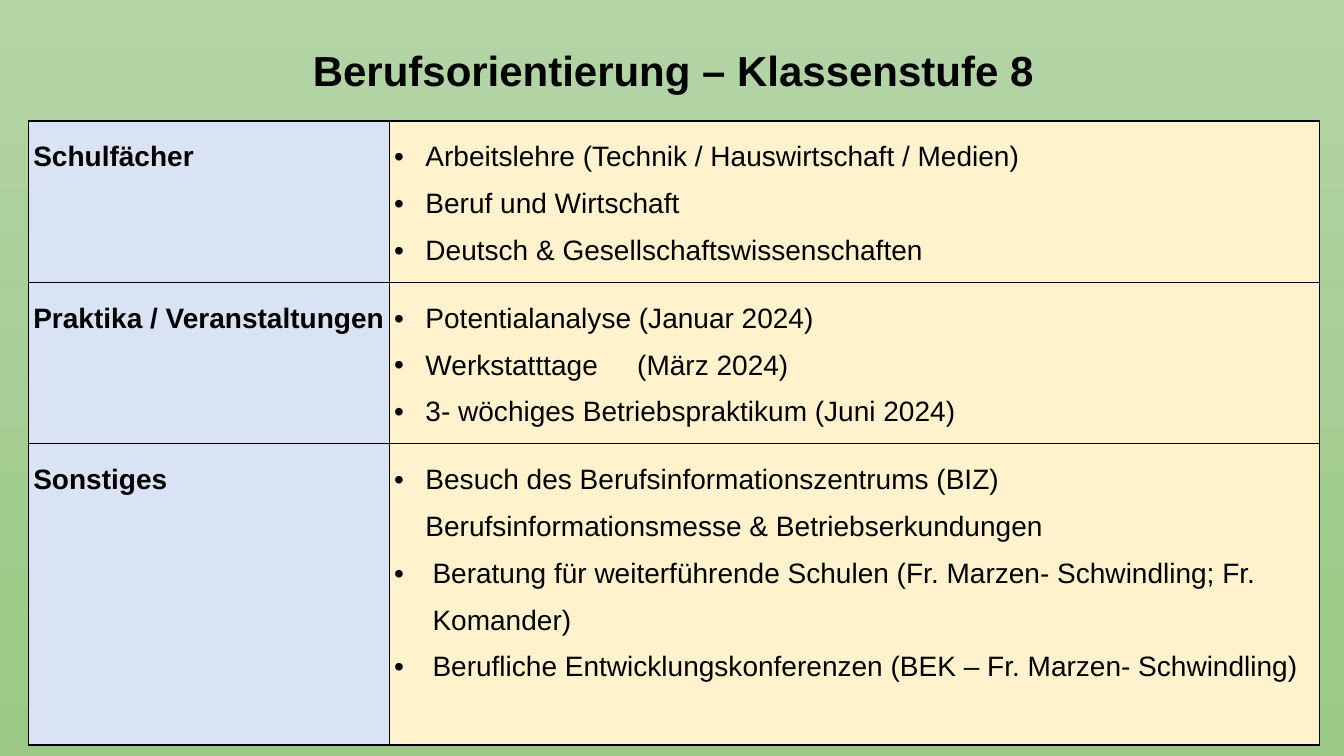
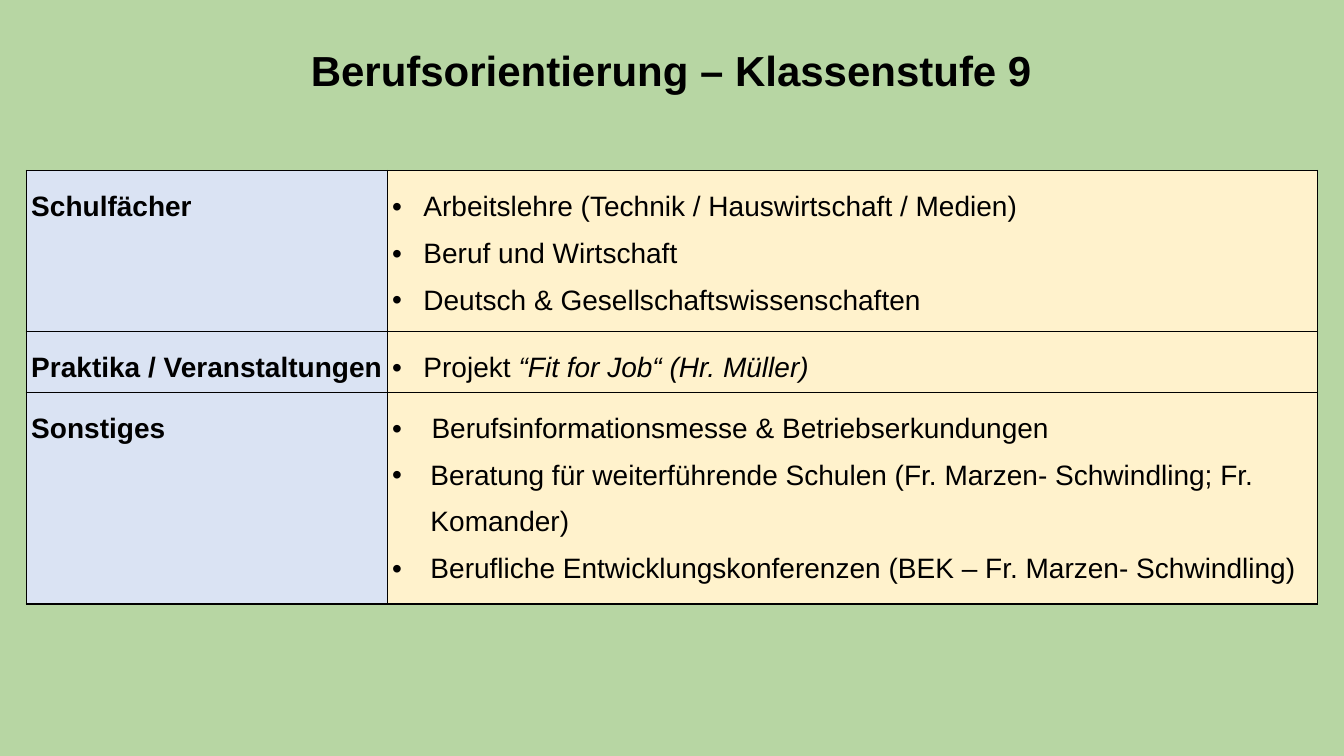
from lxml import etree
from pptx import Presentation
from pptx.dml.color import RGBColor
from pptx.enum import text
from pptx.oxml import ns
from pptx.util import Inches, Pt

BLACK = RGBColor(0, 0, 0)
LABEL_BLUE = RGBColor(0xDA, 0xE3, 0xF3)
CONTENT_CREAM = RGBColor(0xFF, 0xF2, 0xCC)
GREEN_TOP = RGBColor(0xB4, 0xD4, 0xA5)
GREEN_BOTTOM = RGBColor(0x9B, 0xC9, 0x85)
GREEN_PLAIN = RGBColor(0xB7, 0xD6, 0xA3)

FONT = "Arial"
WIDTH, HEIGHT = 13.33, 7.5
COLUMNS = (3.58, 9.23)
PADDING = 0.05
NARROW, WIDE = 0.31, 0.38
DATE_TAB = 2.41
TITLE_SIZE, BODY_SIZE = 30, 20

SUBJECTS = [
    (NARROW, "Arbeitslehre (Technik / Hauswirtschaft / Medien)"),
    (NARROW, "Beruf und Wirtschaft"),
    (NARROW, "Deutsch & Gesellschaftswissenschaften"),
]
ADVICE = [
    (WIDE, "Beratung für weiterführende Schulen (Fr. Marzen- Schwindling; Fr. Komander)"),
    (WIDE, "Berufliche Entwicklungskonferenzen (BEK – Fr. Marzen- Schwindling)"),
]
LABELS = ("Schulfächer", "Praktika / Veranstaltungen", "Sonstiges")
PAGES = [
    {
        "title": "Berufsorientierung – Klassenstufe 8",
        "background": (GREEN_TOP, GREEN_BOTTOM),
        "left": 0.28,
        "top": 1.2,
        "rows": (1.54, 1.54, 2.99),
        "content": (
            SUBJECTS,
            [
                (NARROW, "Potentialanalyse (Januar 2024)"),
                (NARROW, "Werkstatttage\t(März 2024)"),
                (NARROW, "3- wöchiges Betriebspraktikum (Juni 2024)"),
            ],
            [(NARROW, "Besuch des Berufsinformationszentrums (BIZ) "
                      "Berufsinformationsmesse & Betriebserkundungen")] + ADVICE,
        ),
    },
    {
        "title": "Berufsorientierung – Klassenstufe 9",
        "background": (GREEN_PLAIN,),
        "left": 0.26,
        "top": 1.69,
        "rows": (1.49, 0.56, 1.96),
        "content": (
            SUBJECTS,
            [(NARROW, "Projekt ", "“Fit for Job“ (Hr. Müller)")],
            [(WIDE + 0.01, "Berufsinformationsmesse & Betriebserkundungen")] + ADVICE,
        ),
    },
]


def add_element(parent, tag, **attributes):
    return etree.SubElement(parent, ns.qn(tag), attributes)


def style_font(target, size, bold):
    font = target.font
    font.name, font.size, font.bold = FONT, Pt(size), bold
    font.color.rgb = BLACK


def set_padding(target):
    for side in ("left", "right", "top", "bottom"):
        setattr(target, "margin_" + side, Inches(PADDING))


def paint_background(page, colours):
    fill = page.background.fill
    if len(colours) == 1:
        fill.solid()
        fill.fore_color.rgb = colours[0]
        return
    fill.gradient()
    fill.gradient_angle = 270
    for stop, colour in zip(fill.gradient_stops, colours):
        stop.color.rgb = colour


def add_title(page, title, left):
    box = page.shapes.add_textbox(Inches(left), 0, Inches(11.5), Inches(1.45))
    frame = box.text_frame
    frame.word_wrap = True
    frame.vertical_anchor = text.MSO_ANCHOR.MIDDLE
    set_padding(frame)
    para = frame.paragraphs[0]
    para.text = title
    para.alignment = text.PP_ALIGN.CENTER
    para.line_spacing = 0.9
    style_font(para, TITLE_SIZE, True)


def style_cell(cell, colour):
    cell.fill.solid()
    cell.fill.fore_color.rgb = colour
    set_padding(cell)
    properties = cell._tc.get_or_add_tcPr()
    for position, side in enumerate("LRTB"):
        line = etree.Element(ns.qn("a:ln" + side), w=str(Pt(1)))
        solid = add_element(line, "a:solidFill")
        add_element(solid, "a:srgbClr", val=str(BLACK))
        properties.insert(position, line)


def add_bullet(para, indent):
    properties = para._p.get_or_add_pPr()
    properties.set("marL", str(Inches(indent)))
    properties.set("indent", str(-Inches(indent)))
    add_element(properties, "a:buFont", typeface=FONT)
    add_element(properties, "a:buChar", char="•")
    if "\t" in para.text:
        tabs = add_element(properties, "a:tabLst")
        add_element(tabs, "a:tab", pos=str(Inches(DATE_TAB)), algn="l")


def add_spans(para, parts, bold):
    para.line_spacing = 1.5
    for position, part in enumerate(parts):
        span = para.add_run()
        span.text = part
        style_font(span, BODY_SIZE, bold)
        if position:
            span.font.italic = True


def fill_label(cell, label):
    style_cell(cell, LABEL_BLUE)
    cell.margin_right = 0
    add_spans(cell.text_frame.paragraphs[0], [label], True)


def fill_content(cell, items):
    style_cell(cell, CONTENT_CREAM)
    frame = cell.text_frame
    for number, (indent, *parts) in enumerate(items):
        para = frame.add_paragraph() if number else frame.paragraphs[0]
        add_spans(para, parts, False)
        add_bullet(para, indent)


def add_overview(page, data):
    rows = data["rows"]
    table = page.shapes.add_table(
        len(rows), len(COLUMNS), Inches(data["left"]), Inches(data["top"]),
        Inches(sum(COLUMNS)), Inches(sum(rows))).table
    for column, width in zip(table.columns, COLUMNS):
        column.width = Inches(width)
    for number, (height, label, items) in enumerate(zip(rows, LABELS, data["content"])):
        table.rows[number].height = Inches(height)
        fill_label(table.cell(number, 0), label)
        fill_content(table.cell(number, 1), items)


def main():
    deck = Presentation()
    deck.slide_width, deck.slide_height = Inches(WIDTH), Inches(HEIGHT)
    for data in PAGES:
        page = deck.slides.add_slide(deck.slide_layouts[6])
        paint_background(page, data["background"])
        add_title(page, data["title"], data["left"] + 0.65)
        add_overview(page, data)
    deck.save("out.pptx")


if __name__ == "__main__":
    main()
